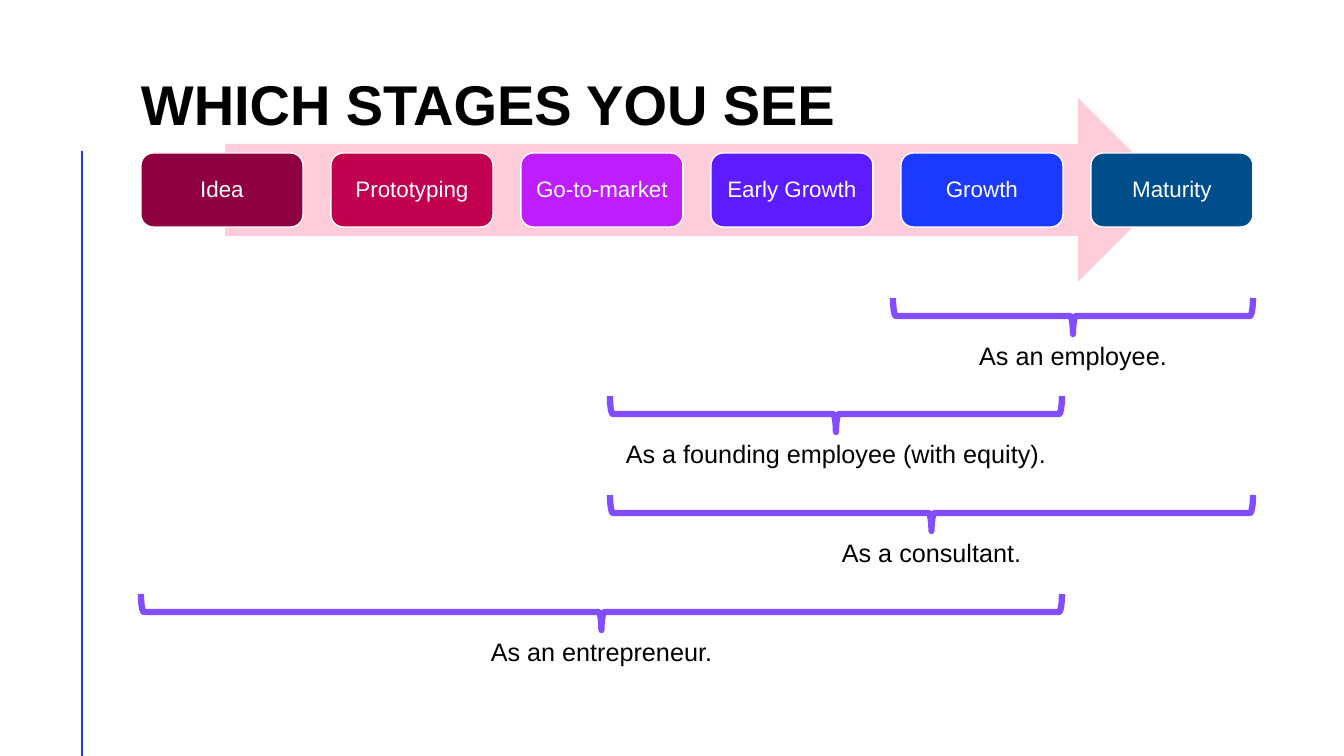
from dataclasses import dataclass

import pptx
import pptx.dml.color
import pptx.enum.shapes
import pptx.enum.text
import pptx.oxml.ns
import pptx.util
from lxml import etree

RGB = pptx.dml.color.RGBColor
Pt = pptx.util.Pt
Shape = pptx.enum.shapes.MSO_SHAPE
Align = pptx.enum.text.PP_ALIGN
Anchor = pptx.enum.text.MSO_ANCHOR
Fit = pptx.enum.text.MSO_AUTO_SIZE

BLACK = RGB(0x00, 0x00, 0x00)
WHITE = RGB(0xFF, 0xFF, 0xFF)
PINK = RGB(0xFF, 0xCD, 0xD9)
VIOLET = RGB(0x81, 0x4D, 0xFF)
WINE = RGB(0x8F, 0x00, 0x41)
RED = RGB(0xC1, 0x00, 0x4F)
MAGENTA = RGB(0xBD, 0x1D, 0xFF)
PURPLE = RGB(0x5D, 0x1C, 0xFF)
BLUE = RGB(0x1B, 0x39, 0xFF)
NAVY = RGB(0x00, 0x4D, 0x8C)

FONT = "Arial"
WIDE, HIGH = 1344, 756
LEFT, PITCH = 141, 190
BRACE = 36


@dataclass
class Stage:
    name: str
    color: RGB


@dataclass
class Role:
    label: str
    start: int
    end: int
    width: int


STAGES = [
    Stage("Idea", WINE),
    Stage("Prototyping", RED),
    Stage("Go-to-market", MAGENTA),
    Stage("Early Growth", PURPLE),
    Stage("Growth", BLUE),
    Stage("Maturity", NAVY),
]
ROLES = [
    Role("As an employee.", 893, 1253, 360),
    Role("As a founding employee (with equity).", 610, 1062, 530),
    Role("As a consultant.", 610, 1253, 643),
    Role("As an entrepreneur.", 141, 1062, 798),
]


def px(size: float) -> int:
    return round(size * 63500 / 7)


def style(par, size: int, color: RGB, align) -> None:
    par.alignment = align
    par.font.name = FONT
    par.font.size = Pt(size)
    par.font.color.rgb = color


def draw_title(slide) -> None:
    title = slide.shapes.title
    title.left, title.top = px(LEFT), px(-4)
    title.width, title.height = px(1112), px(141)
    frame = title.text_frame
    frame.text = "WHICH STAGES YOU SEE"
    frame.auto_size = Fit.NONE
    frame.vertical_anchor = Anchor.BOTTOM
    frame.margin_left = frame.margin_right = 0
    frame.margin_top = frame.margin_bottom = 0
    par = frame.paragraphs[0]
    style(par, 40, BLACK, Align.LEFT)
    par.font.bold = True
    par.line_spacing = Pt(40)


def draw_rule(slide) -> None:
    kind = pptx.enum.shapes.MSO_CONNECTOR.STRAIGHT
    rule = slide.shapes.add_connector(kind, px(82), px(151), px(82), px(HIGH))
    rule.line.color.rgb = BLUE
    rule.line.width = Pt(2)
    etree.SubElement(rule._element.spPr, pptx.oxml.ns.qn("a:effectLst"))


def draw_role(slide, role: Role, top: int) -> None:
    """Draw a brace that points down at its centred label."""
    span = role.end - role.start
    mid = (role.start + role.end) / 2
    # The brace is placed upright, then turned about its centre.
    brace = slide.shapes.add_shape(
        Shape.LEFT_BRACE, px(mid - BRACE / 2), px(top + BRACE / 2 - span / 2),
        px(BRACE), px(span))
    brace.rotation = 270
    brace.shadow.inherit = False
    brace.fill.background()
    brace.line.color.rgb = VIOLET
    brace.line.width = Pt(4.5)

    label = slide.shapes.add_textbox(
        px(mid - role.width / 2), px(top + BRACE + 1), px(role.width), px(40))
    frame = label.text_frame
    frame.word_wrap = True
    frame.auto_size = Fit.SHAPE_TO_FIT_TEXT
    frame.text = role.label
    style(frame.paragraphs[0], 18, BLACK, Align.CENTER)


def draw_arrow(slide) -> None:
    arrow = slide.shapes.add_shape(
        Shape.RIGHT_ARROW, px(225), px(98), px(945), px(184))
    arrow.shadow.inherit = False
    arrow.fill.solid()
    arrow.fill.fore_color.rgb = PINK
    arrow.line.fill.background()


def draw_stage(slide, stage: Stage, left: int) -> None:
    box = slide.shapes.add_shape(
        Shape.ROUNDED_RECTANGLE, px(left), px(153), px(162), px(74))
    box.shadow.inherit = False
    box.fill.solid()
    box.fill.fore_color.rgb = stage.color
    box.line.color.rgb = WHITE
    box.line.width = Pt(1)
    frame = box.text_frame
    frame.word_wrap = True
    frame.vertical_anchor = Anchor.MIDDLE
    frame.margin_left = frame.margin_right = px(7)
    frame.margin_top = frame.margin_bottom = px(7)
    frame.text = stage.name
    par = frame.paragraphs[0]
    style(par, 16, WHITE, Align.CENTER)
    par.line_spacing = 0.9


def main() -> None:
    deck = pptx.Presentation()
    deck.slide_width, deck.slide_height = px(WIDE), px(HIGH)
    slide = deck.slides.add_slide(deck.slide_layouts.get_by_name("Title Only"))
    draw_rule(slide)
    draw_title(slide)
    for row, role in enumerate(ROLES):
        draw_role(slide, role, 298 + row * 296 // 3)
    draw_arrow(slide)
    for col, stage in enumerate(STAGES):
        draw_stage(slide, stage, LEFT + col * PITCH)
    deck.save("out.pptx")


if __name__ == "__main__":
    main()
